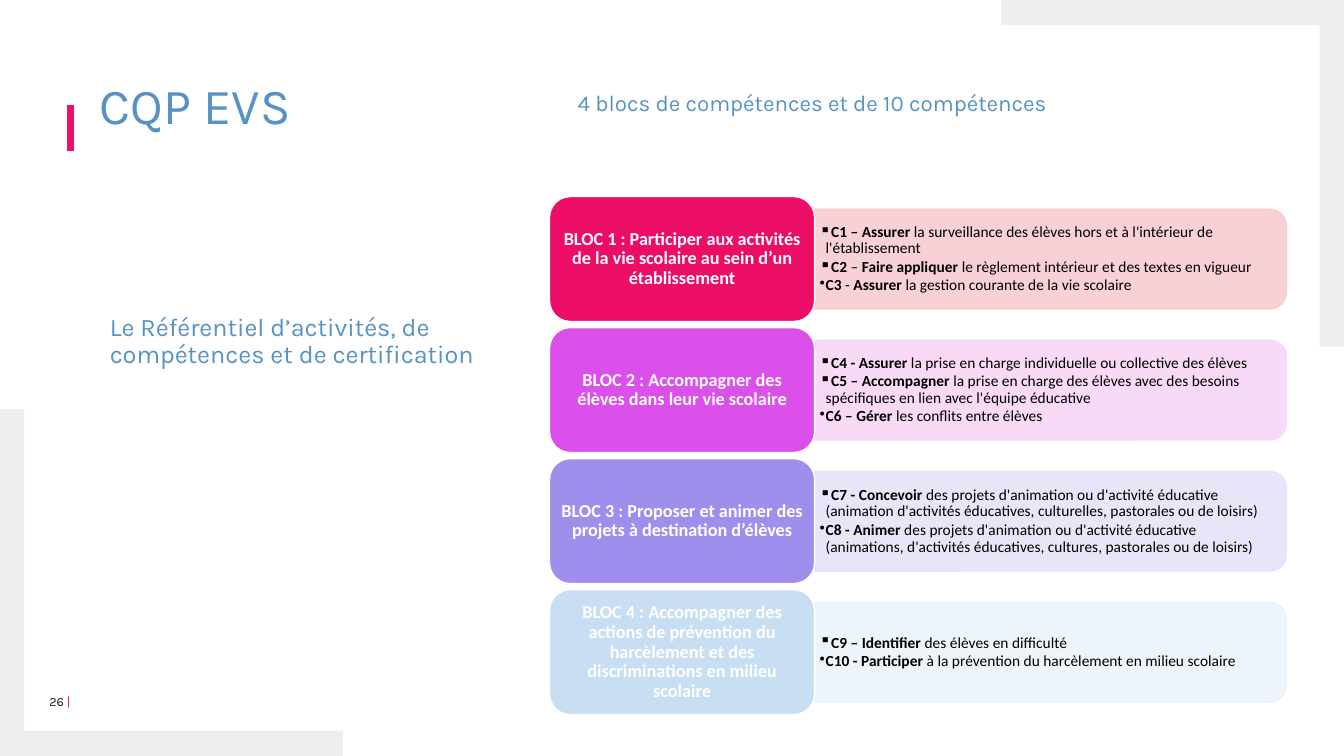
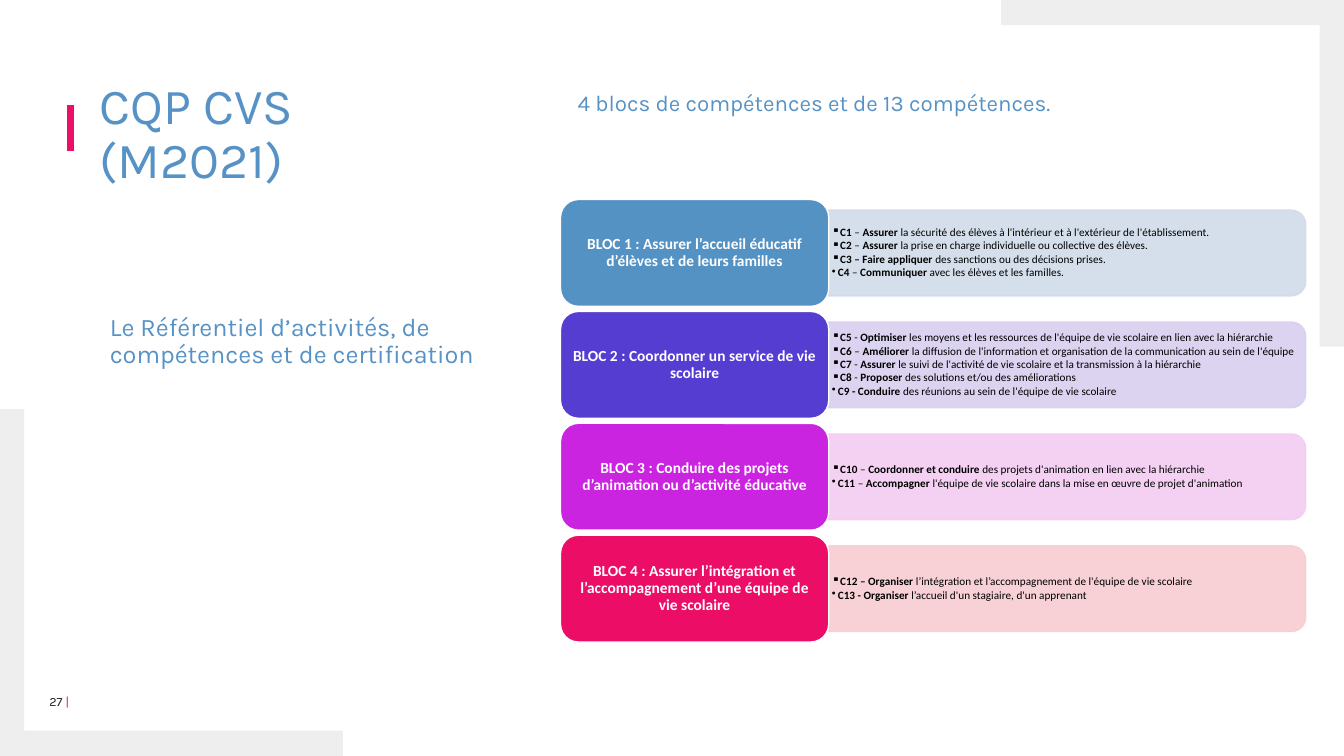
from dataclasses import dataclass

from lxml.etree import SubElement
from pptx import Presentation
from pptx.dml.color import RGBColor
from pptx.enum.shapes import MSO_CONNECTOR, MSO_SHAPE
from pptx.enum.text import MSO_ANCHOR, MSO_AUTO_SIZE, PP_ALIGN
from pptx.oxml.ns import qn
from pptx.util import Inches, Pt

SLIDE_W, SLIDE_H = 13.33, 7.5
TITLE_ONLY = 5

BLUE = RGBColor(0x56, 0x92, 0xC5)
STEEL = RGBColor(0x55, 0x92, 0xC4)
PINK = RGBColor(0xED, 0x0F, 0x67)
CRIMSON = RGBColor(0xEC, 0x0E, 0x66)
ORCHID = RGBColor(0xDB, 0x4F, 0xEB)
LAVENDER = RGBColor(0xA0, 0x8E, 0xEC)
SKY = RGBColor(0xC8, 0xDE, 0xF2)
INDIGO = RGBColor(0x56, 0x3D, 0xD1)
MAGENTA = RGBColor(0xCB, 0x24, 0xE0)
PALE_PINK = RGBColor(0xF8, 0xCC, 0xD3)
PALE_ORCHID = RGBColor(0xF8, 0xD7, 0xF6)
PALE_LAVENDER = RGBColor(0xE8, 0xE2, 0xF9)
PALE_SKY = RGBColor(0xEC, 0xF3, 0xFA)
PALE_STEEL = RGBColor(0xD1, 0xDC, 0xEA)
PALE_INDIGO = RGBColor(0xD9, 0xCF, 0xEF)
PALE_MAGENTA = RGBColor(0xF3, 0xCD, 0xF1)
GREY = RGBColor(0xEE, 0xEE, 0xEE)
INK = RGBColor(0x23, 0x1F, 0x20)
BLACK = RGBColor(0, 0, 0)
WHITE = RGBColor(0xFF, 0xFF, 0xFF)

HEADING_FONT, BODY_FONT = "Karla", "Calibri"
SUBTITLE = "Le Référentiel d’activités, de compétences et de certification"

# Top right corner band; the bottom left one is its half-turn.
CORNER = [(13.33, 0), (9.93, 0), (9.93, 0.25), (13.09, 0.25), (13.09, 3.44), (13.33, 3.44)]


@dataclass
class BlockGrid:
    """Sizes shared by the rows of one slide, in inches and points."""
    left: float
    top: float
    step: float
    block_w: float
    block_h: float
    panel_w: float
    panel_h: float
    text_inset: float
    block_size: int
    skill_size: int


EVS_GRID = BlockGrid(5.45, 1.95, 1.3, 2.63, 1.24, 4.68, 0.99, 0.05, 13, 11)
CVS_GRID = BlockGrid(5.56, 1.98, 1.11, 2.66, 1.06, 4.73, 0.85, 0.03, 11, 8)

# Each block: title, colour, panel colour, skills (bold parts between asterisks).
EVS_BLOCKS = [
    ("Participer aux activités de la vie scolaire au sein d’un établissement", CRIMSON, PALE_PINK, [
        "*C1 – Assurer* la surveillance des élèves hors et à l'intérieur de l'établissement",
        "*C2* – *Faire appliquer* le règlement intérieur et des textes en vigueur",
        "*C3* - *Assurer* la gestion courante de la vie scolaire"]),
    ("Accompagner des élèves dans leur vie scolaire", ORCHID, PALE_ORCHID, [
        "*C4 - Assurer* la prise en charge individuelle ou collective des élèves",
        "*C5 – Accompagner* la prise en charge des élèves avec des besoins spécifiques "
        "en lien avec l'équipe éducative",
        "*C6 – Gérer* les conflits entre élèves"]),
    ("Proposer et animer des projets à destination d’élèves", LAVENDER, PALE_LAVENDER, [
        "*C7 - Concevoir* des projets d'animation ou d'activité éducative "
        "(animation d'activités éducatives, culturelles, pastorales ou de loisirs)",
        "*C8 - Animer* des projets d'animation ou d'activité éducative "
        "(animations, d'activités éducatives, cultures, pastorales ou de loisirs)"]),
    ("Accompagner des actions de prévention du harcèlement et des discriminations "
     "en milieu scolaire", SKY, PALE_SKY, [
        "*C9 – Identifier* des élèves en difficulté",
        "*C10 - Participer* à la prévention du harcèlement en milieu scolaire"]),
]
CVS_BLOCKS = [
    ("Assurer l’accueil éducatif d’élèves et de leurs familles", STEEL, PALE_STEEL, [
        "*C1* – *Assurer* la sécurité des élèves à l'intérieur et à l'extérieur de l'établissement.",
        "*C2* – *Assurer* la prise en charge individuelle ou collective des élèves.",
        "*C3 – Faire appliquer* des sanctions ou des décisions prises.",
        "*C4* – *Communiquer* avec les élèves et les familles."]),
    ("Coordonner un service de vie scolaire", INDIGO, PALE_INDIGO, [
        "*C5* - *Optimiser* les moyens et les ressources de l'équipe de vie scolaire "
        "en lien avec la hiérarchie",
        "*C6* – *Améliorer* la diffusion de l'information et organisation de la communication "
        "au sein de l'équipe",
        "*C7* - *Assurer* le suivi de l'activité de vie scolaire et la transmission à la hiérarchie",
        "*C8* - *Proposer* des solutions et/ou des améliorations",
        "*C9 - Conduire* des réunions au sein de l'équipe de vie scolaire"]),
    ("Conduire des projets d’animation ou d’activité éducative", MAGENTA, PALE_MAGENTA, [
        "*C10* – *Coordonner et conduire* des projets d'animation en lien avec la hiérarchie",
        "*C11* – *Accompagner* l'équipe de vie scolaire dans la mise en œuvre de projet d'animation"]),
    ("Assurer l’intégration et l’accompagnement d’une équipe de vie scolaire", CRIMSON, PALE_PINK, [
        "*C12 – Organiser* l’intégration et l’accompagnement de l'équipe de vie scolaire",
        "*C13 - Organiser* l’accueil d'un stagiaire, d'un apprenant"]),
]


def place(shape, left, top, width, height):
    shape.left, shape.top = Inches(left), Inches(top)
    shape.width, shape.height = Inches(width), Inches(height)


def set_frame(frame, inset_x, inset_y, anchor=MSO_ANCHOR.TOP):
    frame.word_wrap = True
    frame.auto_size = MSO_AUTO_SIZE.NONE
    frame.vertical_anchor = anchor
    frame.margin_left = frame.margin_right = Inches(inset_x)
    frame.margin_top = frame.margin_bottom = Inches(inset_y)


def style_run(run, font, size, color, bold=False):
    run.font.name, run.font.size, run.font.bold = font, Pt(size), bold
    run.font.color.rgb = color


def write_line(frame, text, font, size, color, bold=False, align=PP_ALIGN.LEFT):
    frame.text = text
    paragraph = frame.paragraphs[0]
    paragraph.alignment, paragraph.line_spacing = align, 0.9
    paragraph.space_before = Pt(0)
    style_run(paragraph.runs[0], font, size, color, bold)


def add_frame(slide, left, top, width, height, inset_x, inset_y, anchor=MSO_ANCHOR.TOP):
    box = slide.shapes.add_textbox(Inches(left), Inches(top), Inches(width), Inches(height))
    set_frame(box.text_frame, inset_x, inset_y, anchor)
    return box.text_frame


def add_filled_shape(slide, preset, left, top, width, height, fill, line):
    shape = slide.shapes.add_shape(
        preset, Inches(left), Inches(top), Inches(width), Inches(height))
    shape.shadow.inherit = False
    shape.fill.solid()
    shape.fill.fore_color.rgb = fill
    shape.line.color.rgb = line
    shape.line.width = Pt(1)
    return shape


def add_corner(slide, points):
    (x, y), *others = [(Inches(px), Inches(py)) for px, py in points]
    builder = slide.shapes.build_freeform(x, y)
    builder.add_line_segments(others, close=True)
    corner = builder.convert_to_shape()
    corner.shadow.inherit = False
    corner.fill.solid()
    corner.fill.fore_color.rgb = GREY
    corner.line.fill.background()


def add_accent_bar(slide):
    bar = slide.shapes.add_connector(
        MSO_CONNECTOR.STRAIGHT, Inches(0.7), Inches(1.04), Inches(0.7), Inches(1.5))
    bar.line.color.rgb = PINK
    bar.line.width = Pt(5)
    SubElement(bar._element.spPr, qn("a:effectLst"))


def add_page_number(slide, number):
    frame = add_frame(slide, 0.45, 6.88, 0.4, 0.15, 0, 0)
    paragraph = frame.paragraphs[0]
    paragraph._p.get_or_add_pPr().set("marL", str(Inches(0.04)))
    for text, color in ((f"{number} ", INK), ("|", PINK)):
        run = paragraph.add_run()
        run.text = text
        style_run(run, HEADING_FONT, 9, color)


def add_base_slide(prs, number, title, summary):
    """Add a slide with the shared decoration, title, subtitle and summary."""
    slide = prs.slides.add_slide(prs.slide_layouts[TITLE_ONLY])
    add_corner(slide, CORNER)
    add_corner(slide, [(SLIDE_W - x, SLIDE_H - y) for x, y in CORNER])
    add_page_number(slide, number)
    add_accent_bar(slide)
    heading = slide.shapes.title
    place(heading, 0.99, 0.8, 3.85, 2.06)
    set_frame(heading.text_frame, 0, 0)
    write_line(heading.text_frame, title, HEADING_FONT, 36, BLUE)
    subtitle = add_frame(slide, 0.99, 3.07, 3.85, 1.34, 0.1, 0.05)
    write_line(subtitle, SUBTITLE, HEADING_FONT, 18, BLUE)
    summary_frame = add_frame(slide, 5.63, 0.87, 6.72, 0.55, 0.1, 0.05)
    write_line(summary_frame, summary, HEADING_FONT, 16, BLUE)
    return slide


def write_skill(paragraph, skill, size, bullet):
    properties = paragraph._p.get_or_add_pPr()
    properties.set("marL", str(Inches(0.06)))
    properties.set("indent", str(-Inches(0.06)))
    SubElement(properties, qn("a:buChar")).set("char", bullet)
    paragraph.line_spacing = 0.9
    paragraph.space_after = Pt(round(size * 0.12, 1))
    for index, part in enumerate(skill.split("*")):
        if part:
            run = paragraph.add_run()
            run.text = part
            style_run(run, BODY_FONT, size, BLACK, bold=index % 2 == 1)


def add_panel(slide, grid, top, color, skills):
    """Add the pale panel, rounded on its right side, and its list of skills."""
    left = grid.left + grid.block_w
    # A quarter turn swaps the sides, so the shape is placed around its centre.
    panel = add_filled_shape(
        slide, MSO_SHAPE.ROUND_2_SAME_RECTANGLE,
        left + (grid.panel_w - grid.panel_h) / 2, top + (grid.panel_h - grid.panel_w) / 2,
        grid.panel_h, grid.panel_w, color, color)
    panel.rotation = 90
    for tint in panel._element.spPr.iter(qn("a:srgbClr")):
        SubElement(tint, qn("a:alpha")).set("val", "90000")
    frame = add_frame(slide, left, top + 0.05, grid.panel_w - 0.04, grid.panel_h - 0.1,
                      grid.text_inset, 0.02, MSO_ANCHOR.MIDDLE)
    for index, skill in enumerate(skills):
        paragraph = frame.add_paragraph() if index else frame.paragraphs[0]
        write_skill(paragraph, skill, grid.skill_size, "•" if skill == skills[-1] else "▪")


def add_block(slide, grid, top, color, title):
    block = add_filled_shape(slide, MSO_SHAPE.ROUNDED_RECTANGLE, grid.left, top,
                             grid.block_w, grid.block_h, color, WHITE)
    set_frame(block.text_frame, 0.05, 0.03, MSO_ANCHOR.MIDDLE)
    write_line(block.text_frame, title, BODY_FONT, grid.block_size, WHITE, True, PP_ALIGN.CENTER)


def add_blocks(slide, grid, blocks):
    for index, (title, color, panel_color, skills) in enumerate(blocks):
        top = grid.top + index * grid.step
        add_panel(slide, grid, top + (grid.block_h - grid.panel_h) / 2, panel_color, skills)
        add_block(slide, grid, top, color, f"BLOC {index + 1} : {title}")


def main():
    prs = Presentation()
    prs.slide_width, prs.slide_height = Inches(SLIDE_W), Inches(SLIDE_H)
    evs = add_base_slide(prs, 26, "CQP EVS", "4 blocs de compétences et de 10 compétences")
    add_blocks(evs, EVS_GRID, EVS_BLOCKS)
    cvs = add_base_slide(prs, 27, "CQP CVS (M2021)",
                         "4 blocs de compétences et de 13 compétences.")
    add_blocks(cvs, CVS_GRID, CVS_BLOCKS)
    prs.save("out.pptx")


if __name__ == "__main__":
    main()
